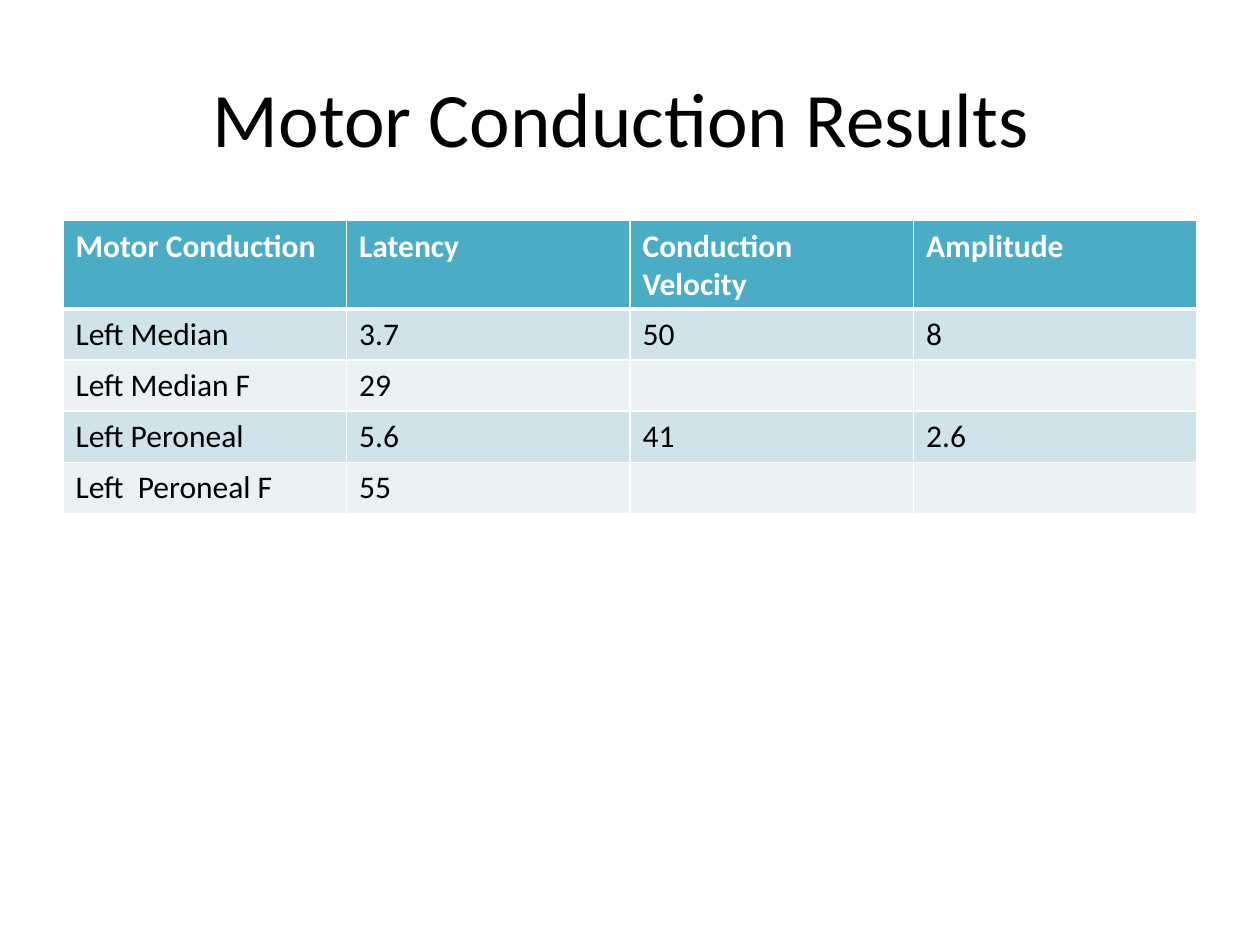
from lxml import etree
from pptx import Presentation
from pptx.dml.color import RGBColor
from pptx.enum.text import MSO_ANCHOR, PP_ALIGN
from pptx.oxml.ns import qn
from pptx.util import Cm, Pt

MIDDLE = MSO_ANCHOR.MIDDLE
LEFT, CENTER = PP_ALIGN.LEFT, PP_ALIGN.CENTER

FONT = "Calibri"
WHITE, BLACK = "FFFFFF", "000000"
HEADER_FILL = "4BACC6"
BAND_FILLS = ["D0E3EA", "E9F1F5"]
HEADER_HEIGHT, ROW_HEIGHT = 1.78, 1.03

RESULTS = [
    ["Motor Conduction", "Latency", "Conduction Velocity", "Amplitude"],
    ["Left Median", "3.7", "50", "8"],
    ["Left Median F", "29", "", ""],
    ["Left Peroneal", "5.6", "41", "2.6"],
    ["Left  Peroneal F", "55", "", ""],
]


def rgb(color):
    return RGBColor.from_string(color)


def write_text(frame, text, size=18, color=BLACK, bold=False, align=LEFT):
    paragraph = frame.paragraphs[0]
    paragraph.alignment = align
    paragraph.font.size = Pt(size)
    if text:
        run = paragraph.add_run()
        run.text = text
        run.font.name = FONT
        run.font.size = Pt(size)
        run.font.bold = bold
        run.font.color.rgb = rgb(color)


def add_border(cell, side, width):
    properties = cell._tc.get_or_add_tcPr()
    line = etree.SubElement(properties, qn(f"a:ln{side}"), w=str(Pt(width)))
    fill = etree.SubElement(line, qn("a:solidFill"))
    etree.SubElement(fill, qn("a:srgbClr"), val=WHITE)


def add_title(slide, left, top, width, height):
    title = slide.shapes.add_textbox(Cm(left), Cm(top), Cm(width), Cm(height))
    frame = title.text_frame
    frame.word_wrap = True
    frame.vertical_anchor = MIDDLE
    write_text(frame, "Motor Conduction Results ", size=44, align=CENTER)


def add_results(slide, left, top, width):
    body_count = len(RESULTS) - 1
    height = HEADER_HEIGHT + body_count * ROW_HEIGHT
    results = slide.shapes.add_table(
        len(RESULTS), len(RESULTS[0]), Cm(left), Cm(top), Cm(width), Cm(height)
    ).table
    for column in results.columns:
        column.width = Cm(width / len(RESULTS[0]))
    for r, values in enumerate(RESULTS):
        header = r == 0
        results.rows[r].height = Cm(HEADER_HEIGHT if header else ROW_HEIGHT)
        widths = {"L": 1, "R": 1, "T": 3 if r == 1 else 1, "B": 3 if header else 1}
        for c, value in enumerate(values):
            cell = results.cell(r, c)
            for side, line_width in widths.items():
                add_border(cell, side, line_width)
            cell.fill.solid()
            cell.fill.fore_color.rgb = rgb(HEADER_FILL if header else BAND_FILLS[(r - 1) % 2])
            write_text(cell.text_frame, value, color=WHITE if header else BLACK, bold=header)


def main():
    deck = Presentation()
    deck.slide_width, deck.slide_height = Cm(25.4), Cm(19.05)
    slide = deck.slides.add_slide(deck.slide_layouts[6])
    add_title(slide, 1.27, 0.76, 22.86, 3.18)
    add_results(slide, 1.27, 4.45, 22.86)
    deck.save("out.pptx")


if __name__ == "__main__":
    main()
